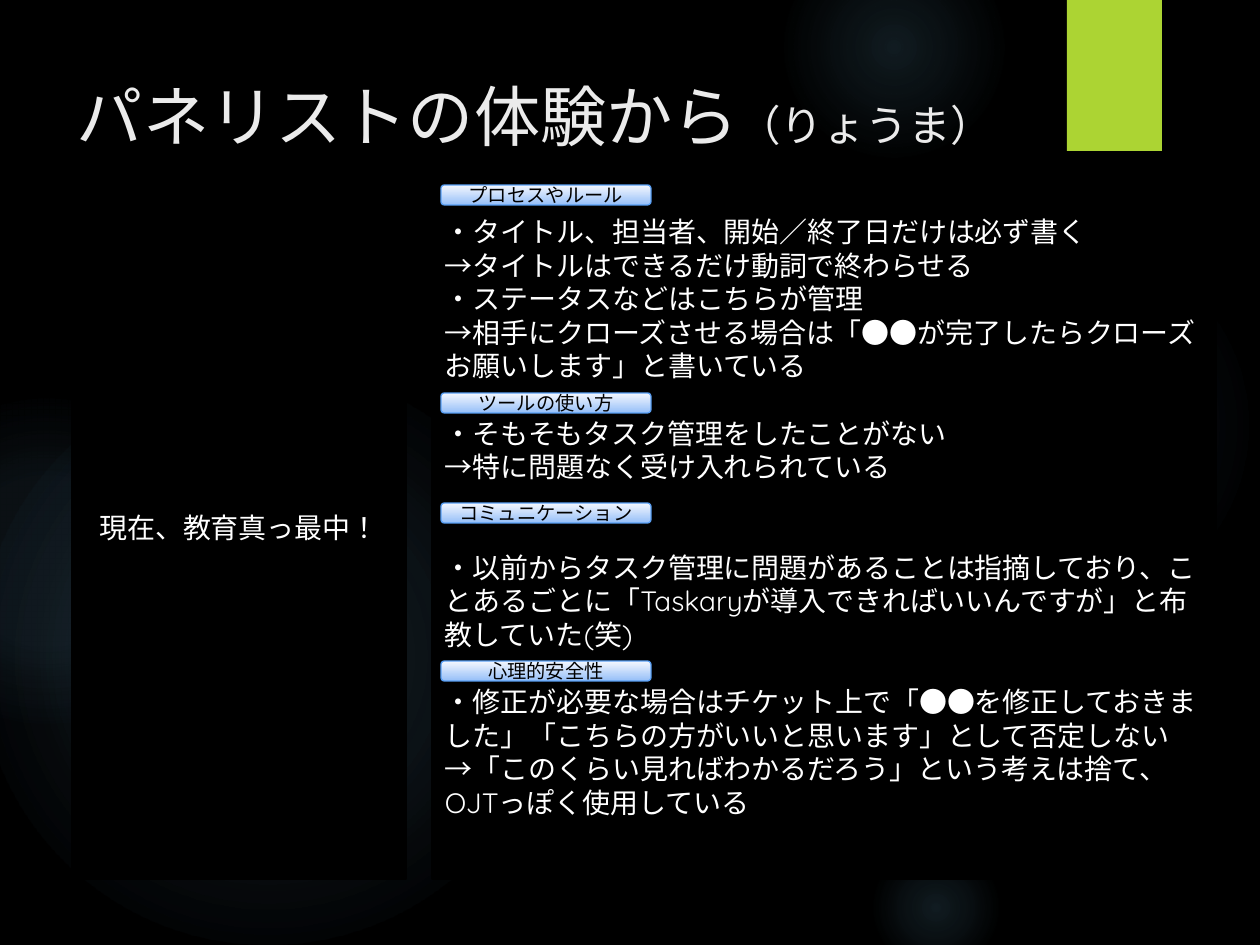
from lxml import etree
from pptx import Presentation
from pptx.dml.color import RGBColor
from pptx.enum.lang import MSO_LANGUAGE_ID
from pptx.enum.shapes import MSO_SHAPE
from pptx.enum.text import MSO_ANCHOR, PP_ALIGN
from pptx.oxml.ns import qn
from pptx.util import Emu, Pt

RECTANGLE, ELLIPSE, ROUNDED = MSO_SHAPE.RECTANGLE, MSO_SHAPE.OVAL, MSO_SHAPE.ROUNDED_RECTANGLE
LEFT, CENTER = PP_ALIGN.LEFT, PP_ALIGN.CENTER
TOP, MIDDLE = MSO_ANCHOR.TOP, MSO_ANCHOR.MIDDLE
JAPANESE = MSO_LANGUAGE_ID.JAPANESE
EMU_PER_PX = 914400 / 126
LINE_PITCH = Pt(19.15)

GLOWS = [
    (868, 231, 388, [(0, 7), (36, 6), (69, 0)]),
    (784, -63, 220, [(0, 14), (36, 7), (73, 0)]),
    (868, 840, 136, [(0, 14), (36, 7), (66, 0)]),
    (-21, 368, 577, [(0, 11), (36, 10), (75, 0)]),
    (-116, 399, 325, [(0, 8), (36, 8), (72, 0)]),
]
TOPICS = [
    (185, 0, "プロセスやルール", [
        "・タイトル、担当者、開始／終了日だけは必ず書く",
        "→タイトルはできるだけ動詞で終わらせる",
        "・ステータスなどはこちらが管理",
        "→相手にクローズさせる場合は「●●が完了したらクローズお願いします」と書いている",
    ]),
    (393, 34, "ツールの使い方", [
        "・そもそもタスク管理をしたことがない",
        "→特に問題なく受け入れられている",
    ]),
    (503, 67, "コミュニケーション", [
        "・以前からタスク管理に問題があることは指摘しており、ことあるごとに"
        "「Taskaryが導入できればいいんですが」と布教していた(笑)",
    ]),
    (661, 34, "心理的安全性", [
        "・修正が必要な場合はチケット上で「●●を修正しておきました」"
        "「こちらの方がいいと思います」として否定しない",
        "→「このくらい見ればわかるだろう」という考えは捨て、OJTっぽく使用している",
    ]),
]


def px(value):
    return Emu(round(value * EMU_PER_PX))


def color(value):
    return RGBColor.from_string(value)


def apply(target, values):
    for name, value in values.items():
        setattr(target, name, value)


class SlideBuilder:
    heading_font = "Quicksand"
    label_font = "Noto Sans CJK JP"

    def __init__(self, page):
        self.page = page

    def background(self, fill):
        self.page.background.fill.solid()
        self.page.background.fill.fore_color.rgb = color(fill)

    def shape(self, kind, bounds, fill=None, line=None, width=1):
        shape = self.page.shapes.add_shape(kind, *map(px, bounds))
        shape.shadow.inherit = False
        if fill:
            shape.fill.solid()
            shape.fill.fore_color.rgb = color(fill)
        if line:
            shape.line.color.rgb = color(line)
            shape.line.width = Pt(width)
        else:
            shape.line.fill.background()
        return shape

    def gradient(self, shape, stops, angle=None):
        shape.fill.background()
        empty = shape.fill._xPr.find(qn("a:noFill"))
        gradient = etree.Element(qn("a:gradFill"), rotWithShape="1")
        stop_list = etree.SubElement(gradient, qn("a:gsLst"))
        for position, value, opacity in stops:
            stop = etree.SubElement(stop_list, qn("a:gs"), pos=str(position * 1000))
            tone = etree.SubElement(stop, qn("a:srgbClr"), val=value)
            etree.SubElement(tone, qn("a:alpha"), val=str(opacity * 1000))
        if angle is None:
            shade = etree.SubElement(gradient, qn("a:path"), {"path": "circle"})
            etree.SubElement(shade, qn("a:fillToRect"), {side: "50000" for side in "ltrb"})
        else:
            etree.SubElement(gradient, qn("a:lin"), ang=str(angle * 60000), scaled="0")
        empty.getparent().replace(empty, gradient)

    def glow(self, left, top, size, stops):
        shape = self.shape(ELLIPSE, (left, top, size, size))
        self.gradient(shape, [(position, "7AC4F0", opacity) for position, opacity in stops])

    def frame(self, box, anchor, side=13, top=6, bottom=6):
        apply(box.text_frame, {
            "word_wrap": True, "vertical_anchor": anchor,
            "margin_left": px(side), "margin_right": px(side),
            "margin_top": px(top), "margin_bottom": px(bottom),
        })
        return box.text_frame

    def span(self, para, text, size, fill, font):
        span = para.add_run()
        span.text = text
        apply(span.font, {"size": Pt(size), "name": font, "language_id": JAPANESE})
        span.font.color.rgb = color(fill)
        etree.SubElement(span.font._element, qn("a:ea"), typeface=font)

    def title(self, bounds, parts):
        box = self.page.shapes.add_textbox(*map(px, bounds))
        para = self.frame(box, MIDDLE).paragraphs[0]
        for text, size in parts:
            self.span(para, text, size, "EBEBEB", self.heading_font)

    def panel(self, bounds, entries, anchor, align, top=6):
        box = self.shape(RECTANGLE, bounds, "000000", "000000", 1.5)
        frame = self.frame(box, anchor, top=top)
        for index, (gap, text) in enumerate(entries):
            para = frame.add_paragraph() if index else frame.paragraphs[0]
            apply(para, {"alignment": align, "line_spacing": LINE_PITCH, "space_before": px(gap)})
            self.span(para, text, 16, "FFFFFF", self.heading_font)

    def label(self, bounds, text):
        box = self.shape(ROUNDED, bounds, line="5AA0F5", width=0.75)
        self.gradient(box, [(0, "F5F8FE", 100), (100, "96BFF8", 100)], 90)
        para = self.frame(box, MIDDLE, 0, 0, 0).paragraphs[0]
        para.alignment = CENTER
        self.span(para, text, 11, "000000", self.label_font)


def main():
    deck = Presentation()
    deck.slide_width, deck.slide_height = px(1260), px(945)
    builder = SlideBuilder(deck.slides.add_slide(deck.slide_layouts[6]))
    builder.background("000000")
    for glow in GLOWS:
        builder.glow(*glow)
    builder.shape(RECTANGLE, (1067, 0, 95, 151), "ACD433")
    builder.title((64, 66, 1004, 99), [("パネリストの体験から", 37.8), ("（りょうま）", 24.3)])
    builder.panel((72, 175, 334, 704), [(0, "現在、教育真っ最中！")], MIDDLE, CENTER)
    entries = [(0 if index else gap, text)
               for _, gap, _, texts in TOPICS for index, text in enumerate(texts)]
    builder.panel((432, 175, 784, 704), entries, TOP, LEFT, top=40)
    for top, _, name, _ in TOPICS:
        builder.label((441, top, 210, 20), name)
    deck.save("out.pptx")


if __name__ == "__main__":
    main()
